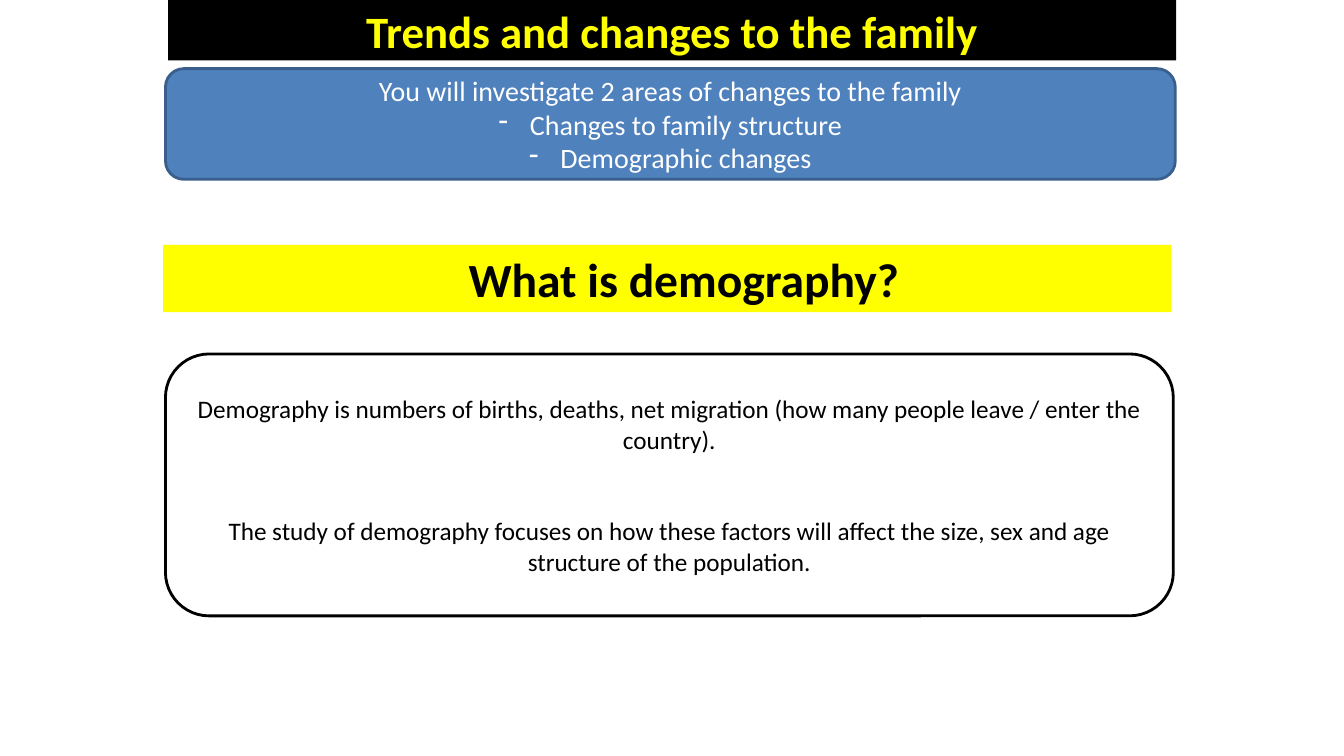
from lxml import etree
from pptx import Presentation
from pptx.dml.color import RGBColor
from pptx.enum.shapes import MSO_SHAPE
from pptx.enum.text import MSO_ANCHOR, PP_ALIGN
from pptx.oxml.ns import qn
from pptx.util import Cm, Pt

RECTANGLE = MSO_SHAPE.RECTANGLE
ROUNDED = MSO_SHAPE.ROUNDED_RECTANGLE
CENTER = PP_ALIGN.CENTER
MIDDLE = MSO_ANCHOR.MIDDLE

FONT = "Calibri"
TITLE = "Trends and changes to the family"
AREAS_INTRO = "You will investigate 2 areas of changes to the family"
AREAS = ["Changes to family structure", "Demographic changes"]
QUESTION = "What is demography?"
ANSWERS = [
    "Demography is numbers of births, deaths, net migration "
    "(how many people leave / enter the country).",
    "The study of demography focuses on how these factors will affect "
    "the size, sex and age structure of the population.",
]

# left, top, width, height in centimetres
TITLE_BOX = (4.24, 0, 25.4, 1.52)
AREAS_BOX = (4.17, 1.73, 25.45, 2.79)
ANSWER_BOX = (4.17, 8.92, 25.4, 6.6)
QUESTION_BOX = (4.11, 6.17, 25.4, 1.7)


def color(hex_string):
    return RGBColor.from_string(hex_string)


def place(shape, box):
    shape.left, shape.top, shape.width, shape.height = map(Cm, box)


def paint(shape, fill, line=None):
    shape.fill.solid()
    shape.fill.fore_color.rgb = color(fill)
    if line:
        shape.line.color.rgb = color(line)
        shape.line.width = Pt(2)
    else:
        shape.line.fill.background()


def write(shape, lines, size, text_color, bold=False):
    """Fill the shape with centred paragraphs and return them."""
    frame = shape.text_frame
    frame.word_wrap = True
    frame.vertical_anchor = MIDDLE
    frame.text = "\n".join(lines)
    for paragraph in frame.paragraphs:
        paragraph.alignment = CENTER
        font = paragraph.font
        font.name, font.size, font.bold = FONT, Pt(size), bold
        font.color.rgb = color(text_color)
    return frame.paragraphs


def add_panel(slide, kind, box, fill, line=None):
    shape = slide.shapes.add_shape(kind, *map(Cm, box))
    shape.shadow.inherit = False
    paint(shape, fill, line)
    return shape


def add_dash(paragraph):
    """Give the paragraph a hanging dash bullet."""
    properties = paragraph._p.get_or_add_pPr()
    properties.set("marL", str(Cm(0.79)))
    properties.set("indent", str(-Cm(0.79)))
    bullet = etree.Element(qn("a:buChar"), char="-")
    properties.insert_element_before(bullet, "a:tabLst", "a:defRPr", "a:extLst")


def main():
    presentation = Presentation()
    presentation.slide_width, presentation.slide_height = Cm(33.87), Cm(19.05)
    slide = presentation.slides.add_slide(presentation.slide_layouts[5])

    title = slide.shapes.title
    place(title, TITLE_BOX)
    paint(title, "000000")
    write(title, [TITLE], 32, "FFFF00", bold=True)

    areas = add_panel(slide, ROUNDED, AREAS_BOX, "4F81BD", "3A5F8C")
    for paragraph in write(areas, [AREAS_INTRO, *AREAS], 20, "FFFFFF")[1:]:
        add_dash(paragraph)

    answer = add_panel(slide, ROUNDED, ANSWER_BOX, "FFFFFF", "000000")
    write(answer, ANSWERS, 18, "000000")[1].space_before = Pt(44)

    question = add_panel(slide, RECTANGLE, QUESTION_BOX, "FFFF00")
    write(question, [QUESTION], 34, "000000", bold=True)
    question.text_frame.margin_left = Cm(1.1)

    presentation.save("out.pptx")


if __name__ == "__main__":
    main()
